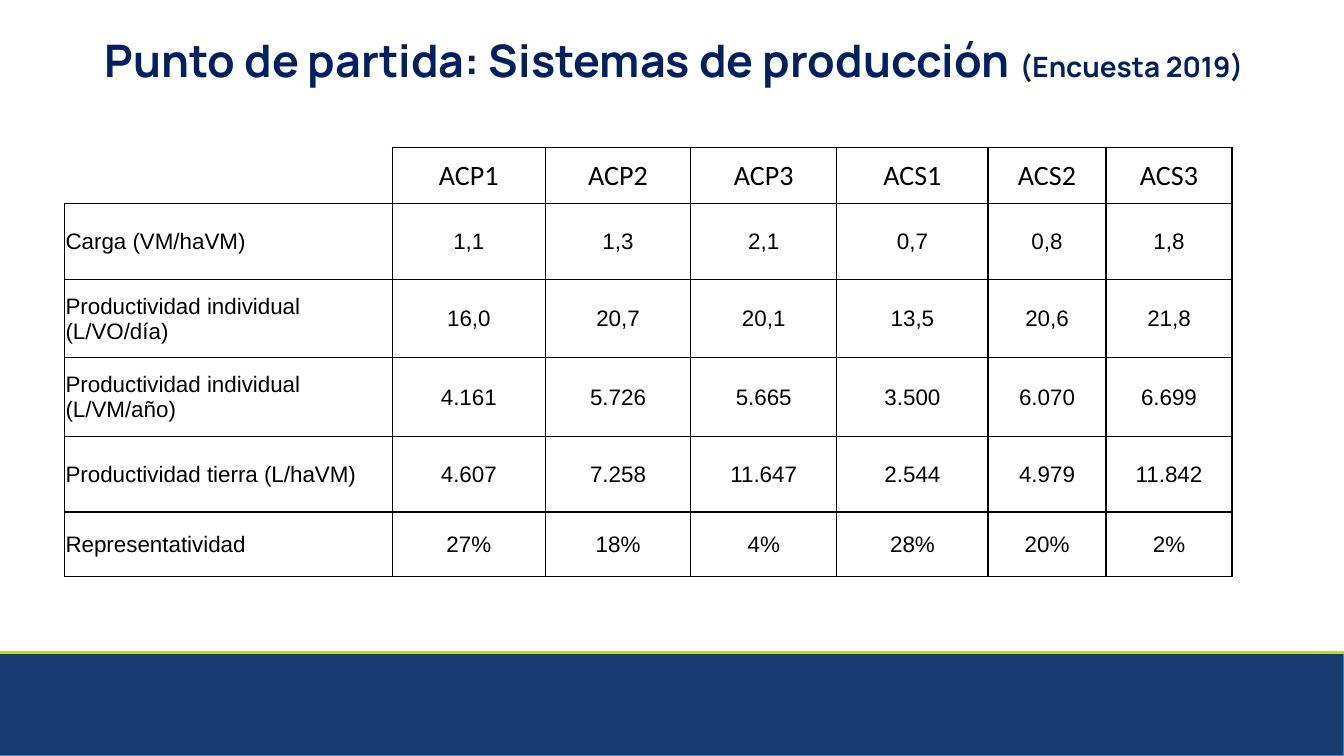
from lxml.etree import SubElement
from pptx import Presentation
from pptx.dml.color import RGBColor
from pptx.enum.shapes import MSO_CONNECTOR, MSO_SHAPE
from pptx.enum.text import MSO_ANCHOR, MSO_AUTO_SIZE, PP_ALIGN
from pptx.oxml.ns import qn
from pptx.util import Inches, Pt

TITLE = [("Punto de partida: Sistemas de producción ", 32), ("(Encuesta 2019)", 20)]
ROWS = [
    ("", "ACP1", "ACP2", "ACP3", "ACS1", "ACS2", "ACS3"),
    ("Carga (VM/haVM)", "1,1", "1,3", "2,1", "0,7", "0,8", "1,8"),
    ("Productividad individual (L/VO/día)", "16,0", "20,7", "20,1", "13,5", "20,6", "21,8"),
    ("Productividad individual (L/VM/año)", "4.161", "5.726", "5.665", "3.500", "6.070", "6.699"),
    ("Productividad tierra (L/haVM)", "4.607", "7.258", "11.647", "2.544", "4.979", "11.842"),
    ("Representatividad", "27%", "18%", "4%", "28%", "20%", "2%"),
]
WIDTHS = [3.25, 1.52, 1.44, 1.45, 1.5, 1.17, 1.25]
HEIGHTS = [0.56, 0.75, 0.78, 0.78, 0.75, 0.64]
COLORS = {"title": "002060", "text": "000000", "band": "183C70",
          "edge": "4B7EBC", "lime": "BDD83C"}
WIDE, HIGH = 13.33, 7.5
BAND_TOP = 6.47


def color(name):
    return RGBColor.from_string(COLORS[name])


def style(run, size, font, name, bold=False):
    run.font.size = Pt(size)
    run.font.name = font
    run.font.bold = bold
    run.font.color.rgb = color(name)


def border(cell, sides):
    """Draw a thin line on the given sides and none on the others."""
    props = cell._tc.get_or_add_tcPr()
    for at, side in enumerate("LRTB"):
        line = props.makeelement(qn(f"a:ln{side}"), {"w": str(Pt(1))})
        if side in sides:
            fill = SubElement(line, qn("a:solidFill"))
            SubElement(fill, qn("a:srgbClr"), val=COLORS["text"])
        else:
            SubElement(line, qn("a:noFill"))
        props.insert(at, line)


def add_title(slide):
    title = slide.shapes.title
    title.left, title.top = Inches(0.94), Inches(0.27)
    title.width, title.height = Inches(11.5), Inches(1.42)
    frame = title.text_frame
    frame.word_wrap = True
    frame.auto_size = MSO_AUTO_SIZE.NONE
    frame.vertical_anchor = MSO_ANCHOR.TOP
    para = frame.paragraphs[0]
    para.alignment = PP_ALIGN.LEFT
    for text, size in TITLE:
        run = para.add_run()
        run.text = text
        style(run, size, "Manrope", "title", True)


def add_grid(slide):
    frame = slide.shapes.add_table(
        len(ROWS), len(WIDTHS), Inches(0.64), Inches(1.46),
        Inches(sum(WIDTHS)), Inches(sum(HEIGHTS)))
    table = frame.table
    table.horz_banding = table.first_row = False
    for col, width in zip(table.columns, WIDTHS):
        col.width = Inches(width)
    for row, height in zip(table.rows, HEIGHTS):
        row.height = Inches(height)
    for r, row in enumerate(ROWS):
        for c, text in enumerate(row):
            cell = table.cell(r, c)
            cell.fill.background()
            border(cell, "LRTB" if text else "RB")
            cell.margin_left = cell.margin_right = cell.margin_top = Inches(0.01)
            cell.margin_bottom = 0
            cell.vertical_anchor = MSO_ANCHOR.MIDDLE
            para = cell.text_frame.paragraphs[0]
            para.text = text
            para.alignment = PP_ALIGN.CENTER if c else PP_ALIGN.LEFT
            for run in para.runs:
                if r:
                    style(run, 16, "Arial", "text")
                else:
                    style(run, 20, "Calibri", "text")


def add_band(slide):
    top, wide = Inches(BAND_TOP), Inches(WIDE)
    band = slide.shapes.add_shape(
        MSO_SHAPE.RECTANGLE, 0, top, wide, Inches(HIGH - BAND_TOP))
    band.shadow.inherit = False
    band.fill.solid()
    band.fill.fore_color.rgb = color("band")
    band.line.color.rgb = color("edge")
    band.line.width = Pt(0.75)
    rule = slide.shapes.add_connector(MSO_CONNECTOR.STRAIGHT, 0, top, wide, top)
    rule.line.color.rgb = color("lime")
    rule.line.width = Pt(2)
    SubElement(rule._element.spPr, qn("a:effectLst"))


def main():
    deck = Presentation()
    deck.slide_width, deck.slide_height = Inches(WIDE), Inches(HIGH)
    slide = deck.slides.add_slide(deck.slide_layouts[5])
    add_title(slide)
    add_grid(slide)
    add_band(slide)
    deck.save("out.pptx")


if __name__ == "__main__":
    main()
